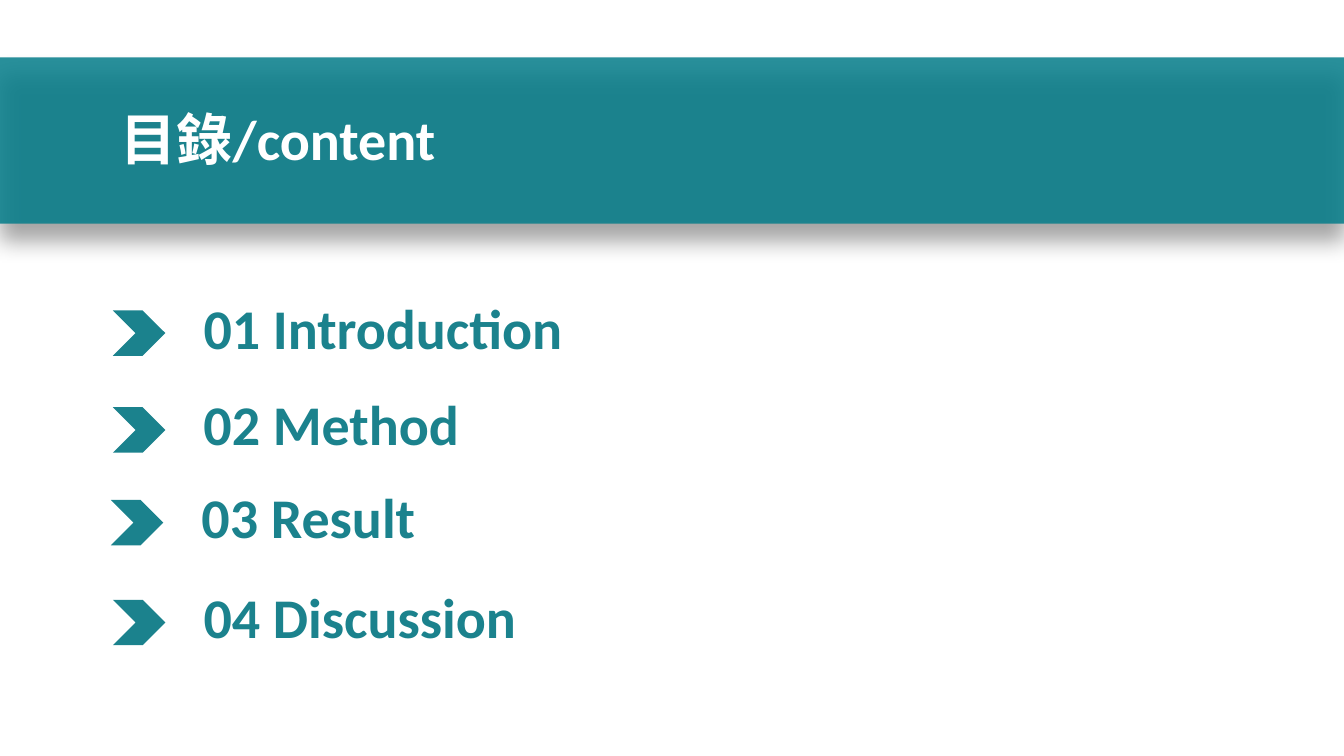
from lxml import etree
from pptx import Presentation
from pptx.dml.color import RGBColor
from pptx.enum.shapes import MSO_SHAPE as SHAPE
from pptx.enum.text import MSO_AUTO_SIZE as AUTO, PP_ALIGN as ALIGN
from pptx.oxml import parse_xml
from pptx.oxml.ns import qn
from pptx.util import Inches, Pt

TEAL = "1B828D"

prs = Presentation()
prs.slide_width, prs.slide_height = Inches(13.33), Inches(7.5)
s = prs.slides.add_slide(prs.slide_layouts[6])


def add_block(kind, x, y, w, h, color):
    sp = s.shapes.add_shape(kind, Inches(x), Inches(y), Inches(w), Inches(h))
    sp.shadow.inherit = False
    sp.fill.solid()
    sp.fill.fore_color.rgb = RGBColor.from_string(color)
    sp.line.fill.background()
    return sp


def add_text(text, x, y, w, h=0.77, size=40, color=TEAL, align=ALIGN.LEFT):
    tf = s.shapes.add_textbox(Inches(x), Inches(y), Inches(w), Inches(h)).text_frame
    tf.word_wrap = True
    tf.auto_size = AUTO.SHAPE_TO_FIT_TEXT
    p = tf.paragraphs[0]
    p.alignment = align
    r = p.add_run()
    r.text = text
    r.font.name, r.font.size, r.font.bold = "Calibri", Pt(size), True
    r.font.color.rgb = RGBColor.from_string(color)


# Title band: translucent fill with a soft shadow below
band = add_block(SHAPE.RECTANGLE, 0, 0.57, 13.33, 1.65, "047D8A")
fill_color = band.fill._xPr.find(qn("a:solidFill"))[0]
etree.SubElement(fill_color, qn("a:alpha"), val="85000")
effects = band.fill._xPr.find(qn("a:effectLst"))
effects.append(parse_xml(
    '<a:outerShdw xmlns:a="http://schemas.openxmlformats.org/drawingml/2006/main" '
    f'blurRad="{Pt(16)}" dist="{Pt(12)}" dir="5400000" algn="t" rotWithShape="0">'
    '<a:srgbClr val="000000"><a:alpha val="42000"/></a:srgbClr></a:outerShdw>'))
add_text("目錄/content", 1.1, 0.99, 5.02, color="FFFFFF", align=ALIGN.JUSTIFY)

# Contents: chevron and heading on each row
rows = [
    ("01 Introduction", 1.12, 3.08, 5.01),
    ("02 Method", 1.12, 4.04, 5.47),
    ("03 Result", 1.1, 4.96, 5.25),
    ("04 Discussion", 1.12, 5.95, 4.75),
]
for heading, x, y, width in rows:
    add_block(SHAPE.CHEVRON, x, y, 0.52, 0.45, TEAL)
    add_text(heading, x + 0.8, y - 0.22, width)

prs.save("out.pptx")
